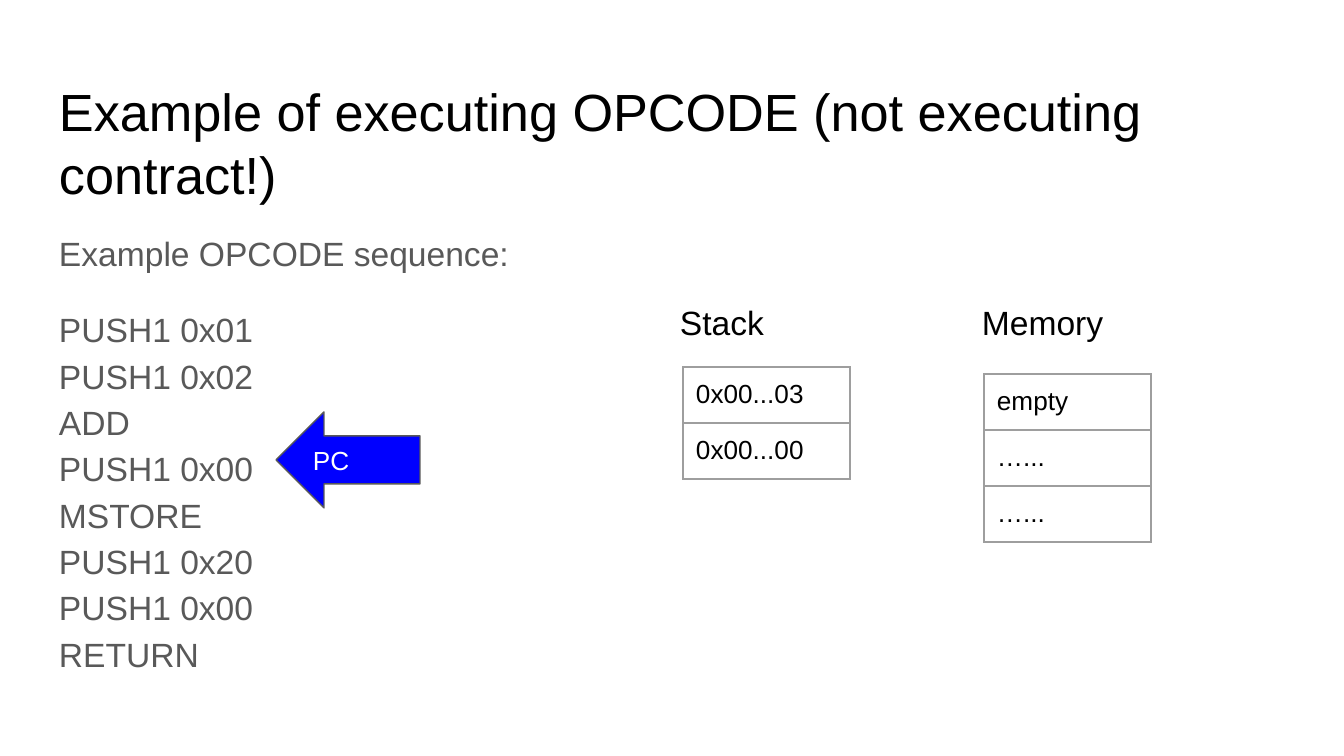
from lxml import etree
from pptx import Presentation
from pptx.dml.color import RGBColor
from pptx.enum.shapes import MSO_SHAPE
from pptx.enum.text import MSO_ANCHOR, MSO_AUTO_SIZE, PP_ALIGN
from pptx.oxml.ns import qn
from pptx.util import Pt

ARROW = MSO_SHAPE.LEFT_ARROW
TOP, MIDDLE = MSO_ANCHOR.TOP, MSO_ANCHOR.MIDDLE
LEFT = PP_ALIGN.LEFT
NO_FIT = MSO_AUTO_SIZE.NONE
SCALE = 914400 / 134.4
PAD = 13
FONT = "Arial"
COLORS = {
    "ink": "000000",
    "gray": "595959",
    "rule": "9E9E9E",
    "blue": "0000FF",
    "white": "FFFFFF",
}
CODE = [
    "PUSH1 0x01", "PUSH1 0x02", "ADD", "PUSH1 0x00",
    "MSTORE", "PUSH1 0x20", "PUSH1 0x00", "RETURN",
]


def px(n):
    return round(n * SCALE)


def rgb(name):
    return RGBColor.from_string(COLORS[name])


def style(par, size, color):
    par.alignment = LEFT
    par.font.name = FONT
    par.font.size = Pt(size)
    par.font.color.rgb = rgb(color)


def write(frame, lines, size, color, anchor=TOP, space=None, gap=0):
    frame.word_wrap = True
    frame.auto_size = NO_FIT
    frame.vertical_anchor = anchor
    frame.margin_left = frame.margin_right = px(PAD)
    frame.margin_top = frame.margin_bottom = px(PAD)
    frame.text = "\n".join(lines)
    for i, par in enumerate(frame.paragraphs):
        style(par, size, color)
        par.line_spacing = space
        par.space_before = Pt(gap if i else 0)


def add_title(slide, text, x, y, w, h):
    title = slide.shapes.title
    title.left, title.top, title.width, title.height = map(px, (x, y, w, h))
    write(title.text_frame, [text], 28, "ink")


def add_text(slide, lines, x, y, w, h, color, **extra):
    box = slide.shapes.add_textbox(*map(px, (x, y, w, h)))
    write(box.text_frame, lines, 18, color, **extra)


def add_edges(cell):
    props = cell._tc.get_or_add_tcPr()
    for i, side in enumerate(("lnL", "lnR", "lnT", "lnB")):
        line = etree.Element(qn(f"a:{side}"), w=str(Pt(0.75)))
        fill = etree.SubElement(line, qn("a:solidFill"))
        etree.SubElement(fill, qn("a:srgbClr"), val=COLORS["rule"])
        props.insert(i, line)


def add_stack(slide, values, x, y, w=167, row=56):
    size = map(px, (x, y, w, row * len(values)))
    table = slide.shapes.add_table(len(values), 1, *size).table
    table.first_row = table.horz_banding = False
    for i, value in enumerate(values):
        table.rows[i].height = px(row)
        cell = table.cell(i, 0)
        cell.margin_left = cell.margin_right = px(PAD)
        cell.margin_top = cell.margin_bottom = px(PAD)
        cell.text = value
        style(cell.text_frame.paragraphs[0], 14, "ink")
        cell.fill.background()
        add_edges(cell)


def add_arrow(slide, text, x, y, w, h):
    arrow = slide.shapes.add_shape(ARROW, *map(px, (x, y, w, h)))
    arrow.shadow.inherit = False
    arrow.fill.solid()
    arrow.fill.fore_color.rgb = rgb("blue")
    arrow.line.color.rgb = rgb("gray")
    arrow.line.width = Pt(0.75)
    write(arrow.text_frame, [text], 14, "white", anchor=MIDDLE)


def main():
    deck = Presentation()
    deck.slide_width, deck.slide_height = px(1344), px(756)
    slide = deck.slides.add_slide(deck.slide_layouts[5])
    add_title(
        slide, "Example of executing OPCODE (not executing contract!)",
        46, 66, 1252, 84,
    )
    body = ["Example OPCODE sequence:", "\v".join(CODE)]
    add_text(slide, body, 46, 214, 1252, 528, "gray", space=1.15, gap=16)
    add_stack(slide, ["0x00...03", "0x00...00"], 683, 367)
    add_stack(slide, ["empty", "…...", "…..."], 984, 374)
    for label, x in (("Stack", 667), ("Memory", 969)):
        add_text(slide, [label], x, 289, 360, 80, "ink")
    add_arrow(slide, "PC", 276, 412, 144, 96)
    deck.save("out.pptx")


if __name__ == "__main__":
    main()
